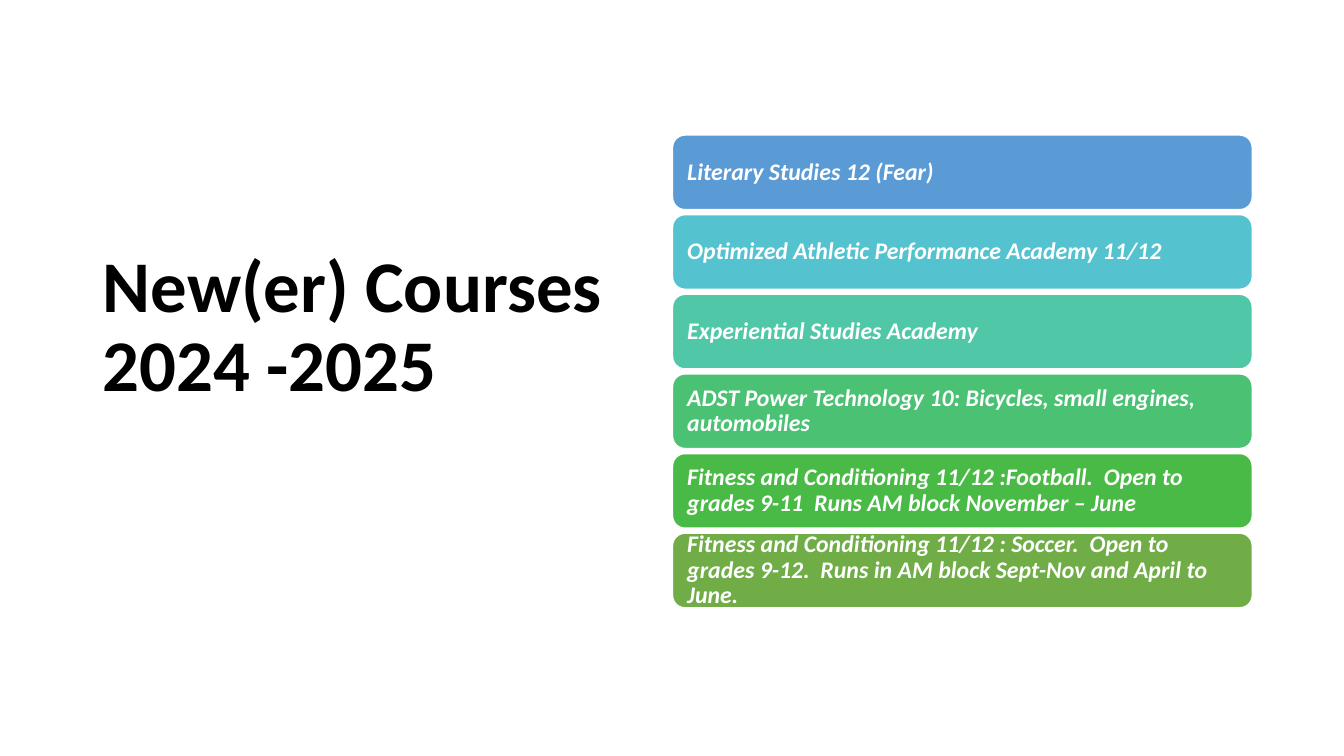
from dataclasses import dataclass

from pptx import Presentation
from pptx.dml.color import RGBColor
from pptx.enum.shapes import MSO_SHAPE
from pptx.enum.text import MSO_ANCHOR, MSO_AUTO_SIZE, PP_ALIGN
from pptx.slide import Slide
from pptx.text.text import TextFrame
from pptx.util import Inches, Pt

BLACK = RGBColor(0x00, 0x00, 0x00)
WHITE = RGBColor(0xFF, 0xFF, 0xFF)
BLUE = RGBColor(0x5B, 0x9B, 0xD5)
CYAN = RGBColor(0x55, 0xC3, 0xCF)
TEAL = RGBColor(0x50, 0xC8, 0xA7)
MINT = RGBColor(0x4B, 0xC1, 0x74)
GREEN = RGBColor(0x4A, 0xBA, 0x46)
OLIVE = RGBColor(0x70, 0xAD, 0x47)

FONT = "Calibri"
COURSE_LEFT = 6.67
COURSE_TOP = 1.34
COURSE_WIDTH = 5.75
COURSE_HEIGHT = 0.74
COURSE_PITCH = 0.79
COURSE_INSET = 0.11


@dataclass(frozen=True)
class Course:
    name: str
    color: RGBColor


COURSES = [
    Course("Literary Studies 12 (Fear)", BLUE),
    Course("Optimized Athletic Performance Academy 11/12", CYAN),
    Course("Experiential Studies Academy", TEAL),
    Course("ADST Power Technology 10: Bicycles, small engines, automobiles", MINT),
    Course("Fitness and Conditioning 11/12 :Football.  Open to grades 9-11  "
           "Runs AM block November – June", GREEN),
    Course("Fitness and Conditioning 11/12 : Soccer.  Open to grades 9-12.  "
           "Runs in AM block Sept-Nov and April to June.", OLIVE),
]


def write_text(frame: TextFrame, text: str, *, size: float, color: RGBColor,
               italic: bool = False) -> None:
    """Fill the frame with bold, left-aligned, vertically centred text."""
    frame.word_wrap = True
    frame.auto_size = MSO_AUTO_SIZE.NONE
    frame.vertical_anchor = MSO_ANCHOR.MIDDLE
    para = frame.paragraphs[0]
    para.text = text
    para.alignment = PP_ALIGN.LEFT
    para.line_spacing = 0.9
    for span in para.runs:
        span.font.name = FONT
        span.font.size = Pt(size)
        span.font.bold = True
        span.font.italic = italic
        span.font.color.rgb = color


def add_title(page: Slide) -> None:
    title = page.shapes.title
    title.left, title.top = Inches(0.92), Inches(0.61)
    title.width, title.height = Inches(5.32), Inches(5.3)
    write_text(title.text_frame, "New(er) Courses\v2024 -2025", size=52, color=BLACK)


def add_course(page: Slide, course: Course, top: float) -> None:
    box = page.shapes.add_shape(
        MSO_SHAPE.ROUNDED_RECTANGLE, Inches(COURSE_LEFT), Inches(top),
        Inches(COURSE_WIDTH), Inches(COURSE_HEIGHT))
    box.shadow.inherit = False
    box.fill.solid()
    box.fill.fore_color.rgb = course.color
    box.line.color.rgb = WHITE
    box.line.width = Pt(1)
    frame = box.text_frame
    frame.margin_left = frame.margin_right = Inches(COURSE_INSET)
    frame.margin_top = frame.margin_bottom = Inches(COURSE_INSET)
    write_text(frame, course.name, size=17, color=WHITE, italic=True)


def main() -> None:
    deck = Presentation()
    deck.slide_width, deck.slide_height = Inches(13.33), Inches(7.5)
    page = deck.slides.add_slide(deck.slide_layouts.get_by_name("Title Only"))
    add_title(page)
    for row, course in enumerate(COURSES):
        add_course(page, course, COURSE_TOP + row * COURSE_PITCH)
    deck.save("out.pptx")


if __name__ == "__main__":
    main()
